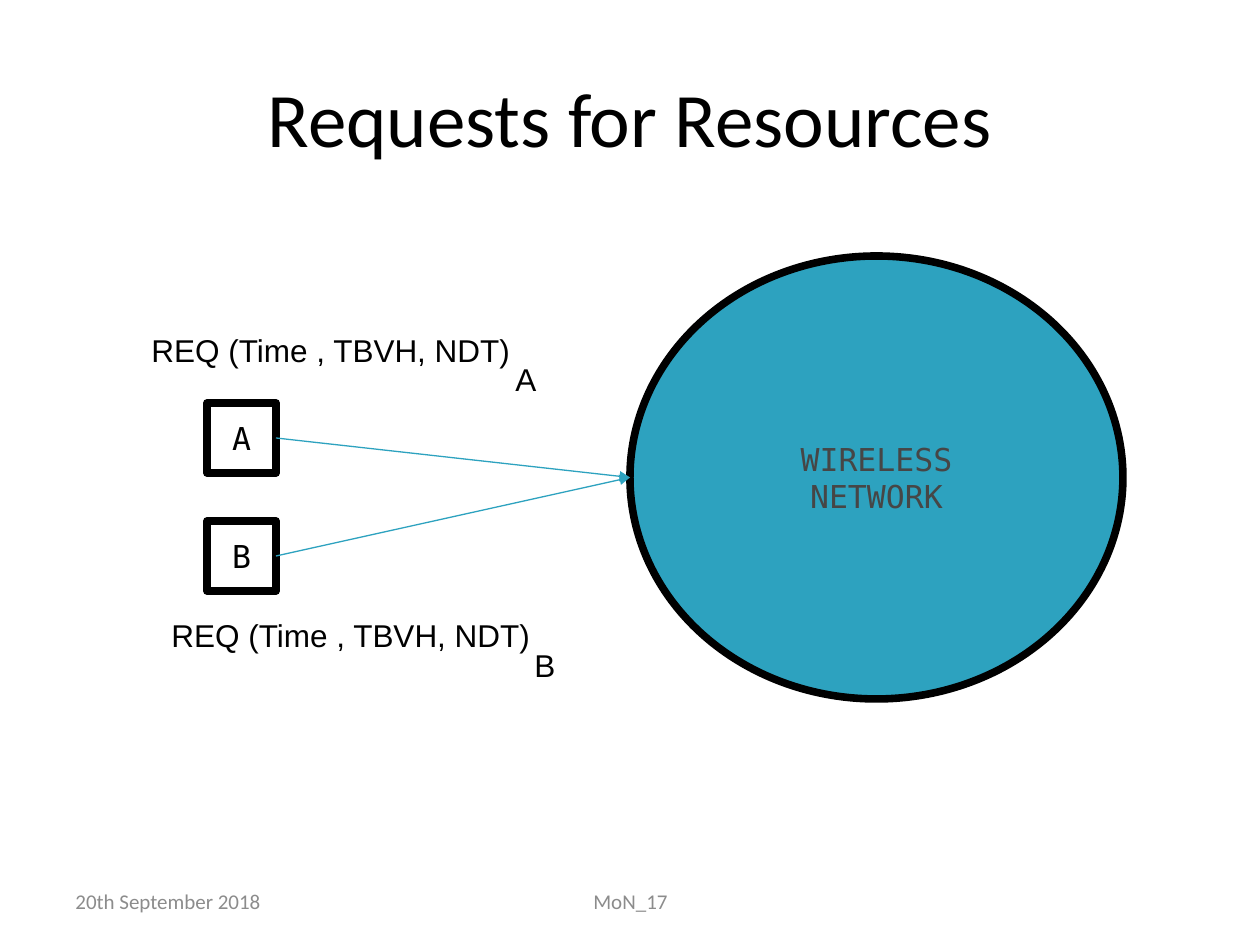
from lxml import etree
from pptx import Presentation
from pptx import util as u
from pptx.dml import color
from pptx.enum import shapes, text
from pptx.oxml import ns

SCALE = 914400 / 126


def px(length):
    return u.Emu(round(length * SCALE))


def rgb(value):
    return color.RGBColor.from_string(value)


class Diagram:
    black = "000000"
    white = "FFFFFF"
    teal = "2DA2BF"
    slate = "464646"
    grey = "8C8C8C"
    sans = "Arial"
    mono = "DejaVu Sans Mono"
    heading = "Calibri"

    def __init__(self, slide):
        self.slide = slide

    def set_words(self, frame, words, font, size, ink, align, anchor):
        frame.text = words
        frame.vertical_anchor = anchor
        for paragraph in frame.paragraphs:
            paragraph.alignment = align
            paragraph.font.name = font
            paragraph.font.size = u.Pt(size)
            paragraph.font.color.rgb = rgb(ink)

    def title(self, words, *box):
        heading = self.slide.shapes.title
        heading.left, heading.top, heading.width, heading.height = map(px, box)
        self.set_words(heading.text_frame, words, self.heading, 44, self.black,
                       text.PP_ALIGN.CENTER, text.MSO_ANCHOR.MIDDLE)

    def node(self, kind, words, box, fill, ink):
        node = self.slide.shapes.add_shape(kind, *map(px, box))
        node.shadow.inherit = False
        node.fill.solid()
        node.fill.fore_color.rgb = rgb(fill)
        node.line.color.rgb = rgb(self.black)
        node.line.width = u.Pt(4.34)
        self.set_words(node.text_frame, words, self.mono, 18, ink,
                       text.PP_ALIGN.CENTER, text.MSO_ANCHOR.MIDDLE)
        return node

    def label(self, words, *box):
        label = self.slide.shapes.add_textbox(*map(px, box))
        label.text_frame.word_wrap = False
        self.set_words(label.text_frame, words, self.sans, 18, self.black,
                       text.PP_ALIGN.LEFT, text.MSO_ANCHOR.TOP)

    def footer(self, words, box, align):
        footer = self.slide.shapes.add_textbox(*map(px, box))
        footer.text_frame.word_wrap = True
        self.set_words(footer.text_frame, words, self.heading, 12, self.grey,
                       align, text.MSO_ANCHOR.MIDDLE)

    def arrow(self, station, network):
        arrow = self.slide.shapes.add_connector(
            shapes.MSO_CONNECTOR.STRAIGHT,
            station.left + station.width, station.top + station.height // 2,
            network.left, network.top + network.height // 2)
        arrow.begin_connect(station, 3)
        arrow.line.color.rgb = rgb(self.teal)
        arrow.line.width = u.Pt(0.75)
        properties = arrow._element.spPr
        etree.SubElement(properties.get_or_add_ln(), ns.qn("a:tailEnd"), type="triangle")
        etree.SubElement(properties, ns.qn("a:effectLst"))


def main():
    deck = Presentation()
    deck.slide_width, deck.slide_height = px(1260), px(945)
    diagram = Diagram(deck.slides.add_slide(deck.slide_layouts[5]))

    diagram.title("Requests for Resources", 63, 38, 1134, 157)
    network = diagram.node(shapes.MSO_SHAPE.OVAL, "WIRELESS\nNETWORK",
                           (630, 256, 493, 443), diagram.teal, diagram.slate)

    stations = (
        ("A", 403, (139, 325), (503, 354)),
        ("B", 521, (159, 610), (522, 640)),
    )
    for name, top, request, subscript in stations:
        station = diagram.node(shapes.MSO_SHAPE.RECTANGLE, name,
                               (207, top, 69, 70), diagram.white, diagram.black)
        diagram.label("REQ (Time , TBVH, NDT)", *request, 386, 50)
        diagram.label(name, *subscript, 45, 50)
        diagram.arrow(station, network)

    diagram.footer("20th September 2018", (63, 876, 294, 50), text.PP_ALIGN.LEFT)
    diagram.footer("MoN_17", (431, 876, 399, 50), text.PP_ALIGN.CENTER)
    deck.save("out.pptx")


if __name__ == "__main__":
    main()
